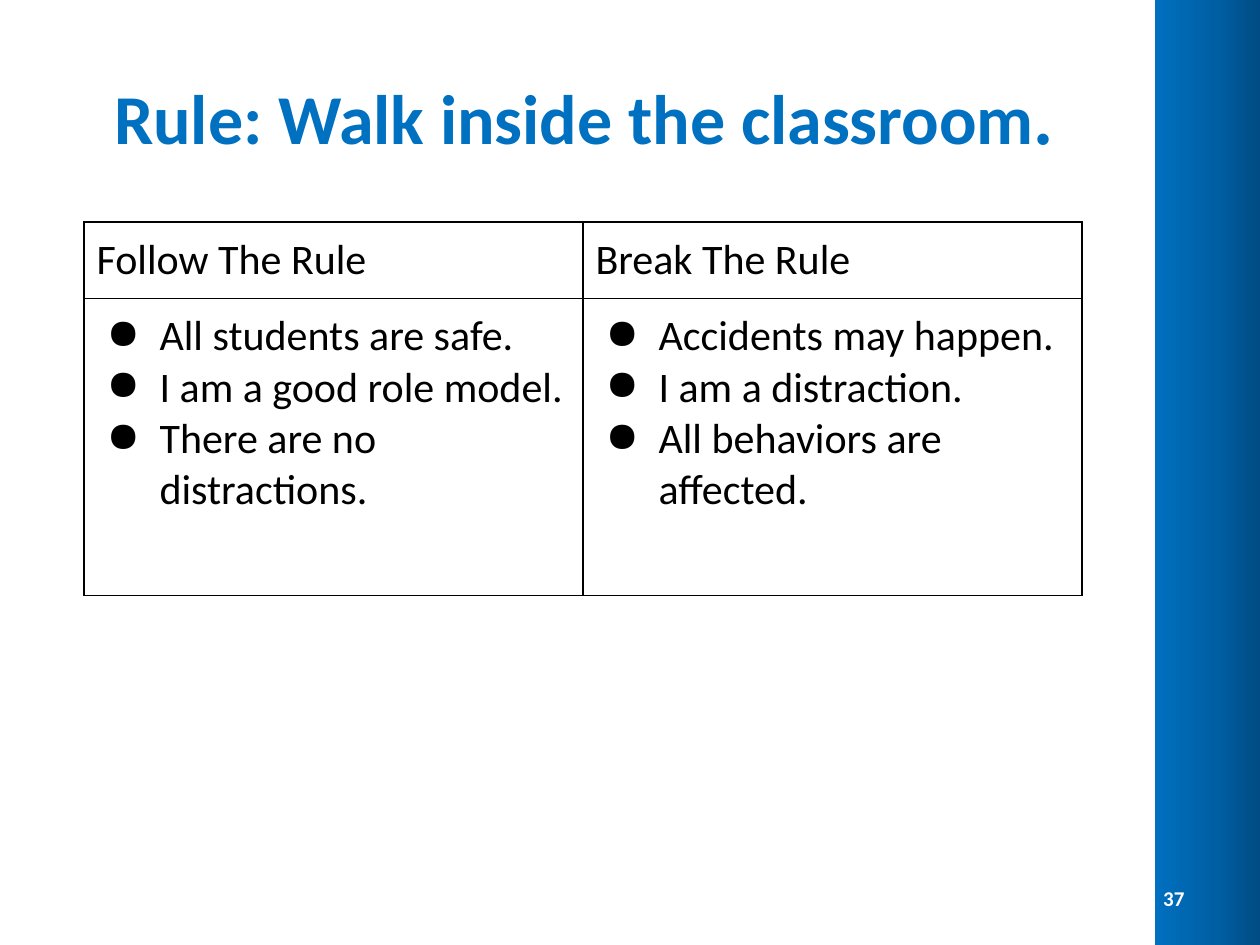
import copy

import pptx
import pptx.dml.color
import pptx.enum.shapes
import pptx.enum.text
import pptx.oxml
import pptx.oxml.ns
import pptx.util
from lxml import etree

RGB = pptx.dml.color.RGBColor
BLUE = RGB(0x00, 0x70, 0xC0)
MID_BLUE = RGB(0x00, 0x5E, 0xA2)
NAVY = RGB(0x00, 0x42, 0x72)
WHITE = RGB(0xFF, 0xFF, 0xFF)
BLACK = RGB(0x00, 0x00, 0x00)
PX = 914400 // 126
Pt = pptx.util.Pt
ALIGN = pptx.enum.text.PP_ALIGN
MIDDLE = pptx.enum.text.MSO_ANCHOR.MIDDLE
qn = pptx.oxml.ns.qn


def add_run(p, text, color, **formats):
    r = p.add_run()
    r.text = text
    r.font.color.rgb = color
    for name, value in {"name": "Calibri", **formats}.items():
        setattr(r.font, name, value)


def set_frame(tf, margin_y):
    formats = {"word_wrap": True, "vertical_anchor": MIDDLE,
               "auto_size": pptx.enum.text.MSO_AUTO_SIZE.NONE,
               "margin_left": 91440, "margin_right": 91440,
               "margin_top": margin_y, "margin_bottom": margin_y}
    for name, value in formats.items():
        setattr(tf, name, value)


prs = pptx.Presentation()
prs.slide_width, prs.slide_height = 1260 * PX, 945 * PX
s = prs.slides.add_slide(prs.slide_layouts[5])

# Side bar
bar = s.shapes.add_shape(pptx.enum.shapes.MSO_SHAPE.RECTANGLE,
                         1155 * PX, 0, 126 * PX, 945 * PX)
bar.shadow.inherit = False
bar.line.fill.background()
bar.fill.gradient()
bar.fill.gradient_angle = 0
stop_list = next(bar._element.spPr.iter(qn("a:gsLst")))
stop_list.insert(1, copy.deepcopy(stop_list[0]))
for stop, position, color in zip(bar.fill.gradient_stops, (0, 0.5, 1),
                                 (BLUE, MID_BLUE, NAVY)):
    stop.position = position
    stop.color.rgb = color

# Title
title = s.shapes.title
title.left, title.top, title.width, title.height = (
    v * PX for v in (63, 38, 1040, 157))
set_frame(title.text_frame, 91440)
p = title.text_frame.paragraphs[0]
p.alignment = ALIGN.CENTER
add_run(p, "Rule: Walk inside the classroom", BLUE, size=Pt(40), bold=True)
add_run(p, ".", BLUE, size=Pt(40), bold=True, name="Times New Roman")

# Slide number
number = s.shapes.add_textbox(1144 * PX, 873 * PX, 53 * PX, 50 * PX)
set_frame(number.text_frame, 45720)
p = number.text_frame.paragraphs[0]
p.alignment = ALIGN.RIGHT
add_run(p, "37", WHITE, size=Pt(12), bold=True)

# Table of outcomes
columns = [
    ("Follow The Rule", ["All students are safe.", "I am a good role model.",
                         "There are no distractions."]),
    ("Break The Rule", ["Accidents may happen.", "I am a distraction.",
                        "All behaviors are affected."]),
]
table = s.shapes.add_table(2, 2, 84 * PX, 222 * PX, 998 * PX, 371 * PX).table
table.first_row = table.horz_banding = False
for row, height in zip(table.rows, (74, 297)):
    row.height = height * PX

for col, (heading, points) in enumerate(columns):
    for row, lines in enumerate(([heading], points)):
        cell = table.cell(row, col)
        cell.margin_left = cell.margin_right = 91440
        cell.margin_top = cell.margin_bottom = 91440
        cell.fill.background()
        tcPr = cell._tc.get_or_add_tcPr()
        for i, side in enumerate(("lnL", "lnR", "lnT", "lnB")):
            ln = etree.Element(qn("a:" + side), w=str(Pt(0.75)))
            fill = etree.SubElement(ln, qn("a:solidFill"))
            etree.SubElement(fill, qn("a:srgbClr"), val=str(BLACK))
            tcPr.insert(i, ln)
        tf = cell.text_frame
        for i, line in enumerate(lines):
            p = tf.add_paragraph() if i else tf.paragraphs[0]
            if row == 1:
                pPr = p._p.get_or_add_pPr()
                pPr.set("marL", str(63 * PX))
                pPr.set("indent", str(-53 * PX))
                etree.SubElement(pPr, qn("a:buChar"), char="●")
            add_run(p, line, BLACK, size=Pt(24))

prs.save("out.pptx")
